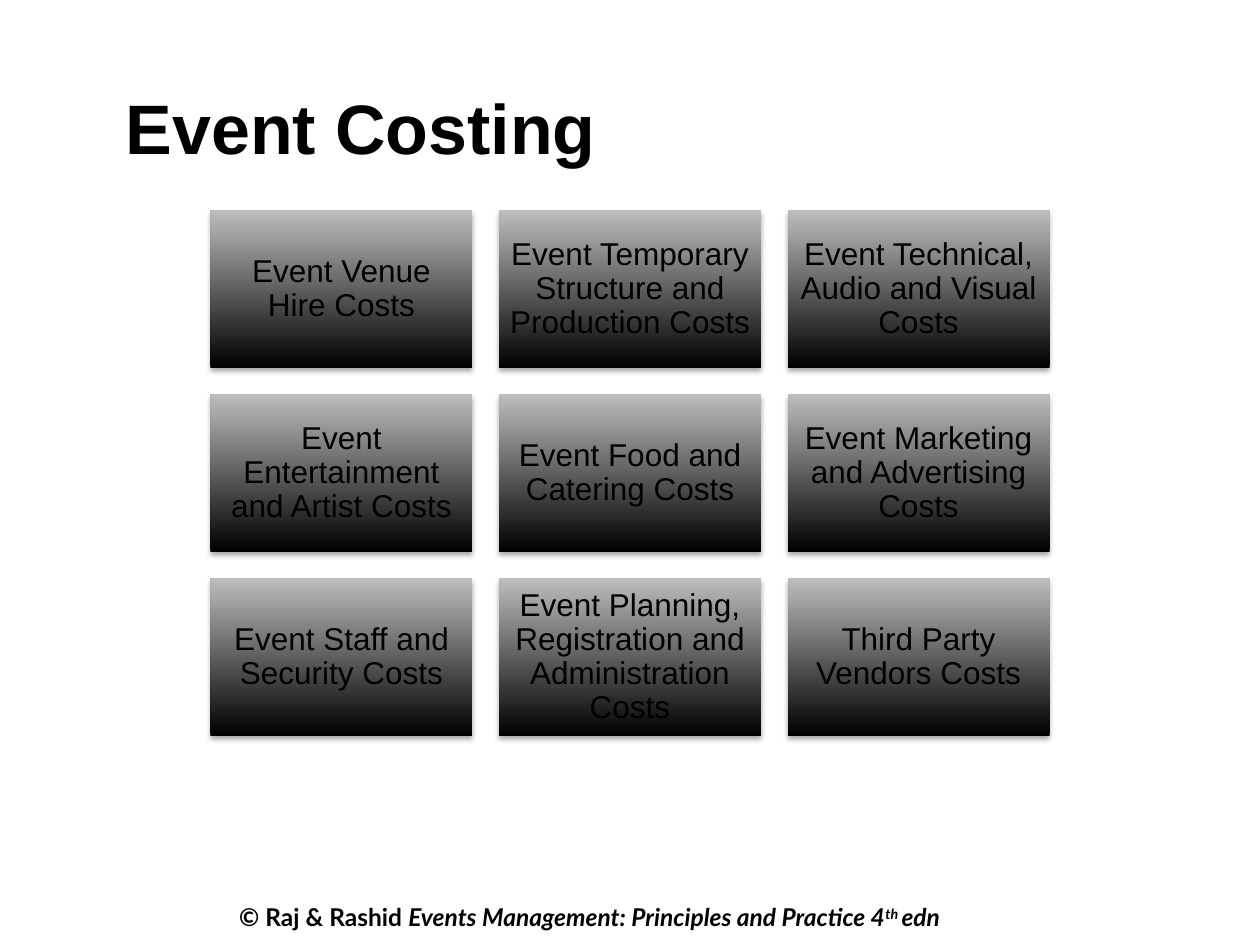
from lxml.etree import SubElement
from pptx import Presentation
from pptx.dml.color import RGBColor
from pptx.enum.shapes import MSO_SHAPE as Shape
from pptx.enum.text import MSO_ANCHOR as Anchor, MSO_AUTO_SIZE as AutoSize, PP_ALIGN as Align
from pptx.oxml.ns import qn
from pptx.util import Inches, Pt

COLORS = {"black": "000000", "grey": "BDBDBD"}
COSTS = [
    "Event Venue Hire Costs",
    "Event Temporary Structure and Production Costs",
    "Event Technical, Audio and Visual Costs",
    "Event Entertainment and Artist Costs",
    "Event Food and Catering Costs",
    "Event Marketing and Advertising Costs",
    "Event Staff and Security Costs",
    "Event Planning, Registration and Administration Costs",
    "Third Party Vendors Costs",
]
COLUMNS = 3
LEFT, TOP = 1.67, 1.67
WIDTH, HEIGHT = 2.08, 1.25
STEP_X, STEP_Y = 2.29, 1.46


def add_text(para, text, font="Arial", size=18, bold=False, italic=False, baseline=0):
    span = para.add_run()
    span.text = text
    span.font.name = font
    span.font.size = Pt(size)
    span.font.bold = bold
    span.font.italic = italic
    span.font.color.rgb = RGBColor.from_string(COLORS["black"])
    if baseline:
        span.font._element.set("baseline", str(baseline * 1000))


def add_line_box(page, left, top, width, height):
    box = page.shapes.add_textbox(Inches(left), Inches(top), Inches(width), Inches(height))
    box.text_frame.word_wrap = False
    box.text_frame.auto_size = AutoSize.SHAPE_TO_FIT_TEXT
    return box.text_frame.paragraphs[0]


deck = Presentation()
deck.slide_width, deck.slide_height = Inches(10), Inches(7.5)
page = deck.slides.add_slide(deck.slide_layouts[6])

footer = add_line_box(page, 1.8, 7.11, 6.97, 0.34)
add_text(footer, "© Raj & Rashid ", font="Lato", size=14, bold=True)
for text, baseline in [
    ("Events Management: Principles and Practice 4", 0),
    ("th ", 30),
    ("edn", 0),
]:
    add_text(footer, text, font="Lato", size=14, bold=True, italic=True, baseline=baseline)

for index, cost in enumerate(COSTS):
    row, column = divmod(index, COLUMNS)
    tile = page.shapes.add_shape(
        Shape.RECTANGLE,
        Inches(LEFT + column * STEP_X),
        Inches(TOP + row * STEP_Y),
        Inches(WIDTH),
        Inches(HEIGHT),
    )
    tile.line.fill.background()
    tile.fill.gradient()
    tile.fill.gradient_angle = 90
    for stop, name, position in zip(tile.fill.gradient_stops, ("black", "grey"), (0, 1)):
        stop.color.rgb = RGBColor.from_string(COLORS[name])
        stop.position = position

    tile.shadow.inherit = False
    effects = tile._element.spPr.find(qn("a:effectLst"))
    shadow = SubElement(
        effects,
        qn("a:outerShdw"),
        blurRad=str(Pt(3.1)),
        dist=str(Pt(1.8)),
        dir="5400000",
        rotWithShape="0",
    )
    tint = SubElement(shadow, qn("a:srgbClr"), val=COLORS["black"])
    SubElement(tint, qn("a:alpha"), val="35000")

    frame = tile.text_frame
    frame.word_wrap = True
    frame.vertical_anchor = Anchor.MIDDLE
    frame.margin_left = frame.margin_right = Inches(0.07)
    frame.margin_top = frame.margin_bottom = Inches(0.07)
    para = frame.paragraphs[0]
    para.alignment = Align.CENTER
    para.line_spacing = 0.9
    add_text(para, cost)

title = add_line_box(page, 0.9, 0.62, 4.13, 0.77)
add_text(title, "Event Costing", size=40, bold=True)

deck.save("out.pptx")
